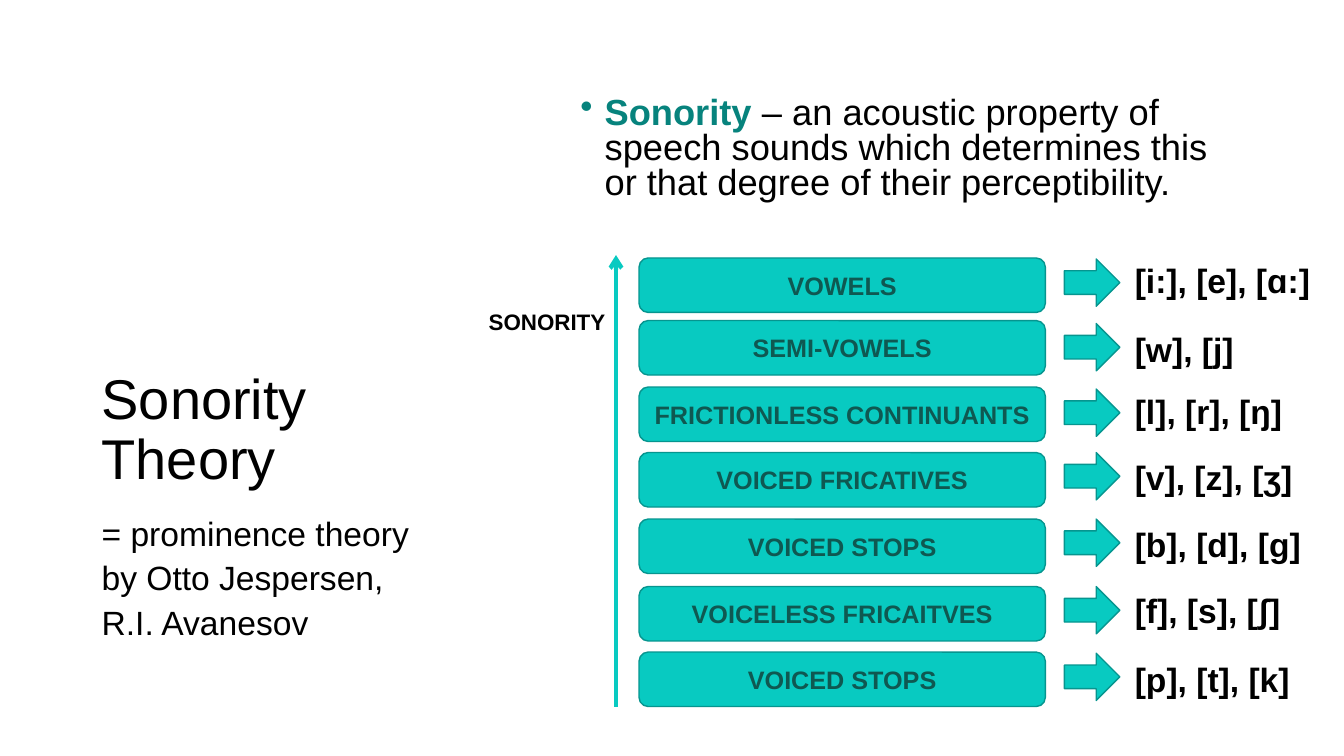
import pptx
import pptx.util
import pptx.dml.color
import pptx.enum.shapes
import pptx.enum.text
import pptx.oxml.ns
import lxml.etree

Pt = pptx.util.Pt
SHAPE = pptx.enum.shapes.MSO_SHAPE
ANCHOR = pptx.enum.text.MSO_ANCHOR
ALIGN = pptx.enum.text.PP_ALIGN

COLORS = {"text": "000000", "accent": "07837D", "fill": "08CAC1",
          "outline": "06958F", "label": "0F5851"}
TITLE = "Sonority Theory"
AUTHORS = ["= prominence theory", "by Otto Jespersen,", "R.I. Avanesov"]
DEFINITION = [
    ("Sonority ", "accent", True),
    ("– an acoustic property of speech sounds which determines this "
     "or that degree of their perceptibility.", "text", False),
]
AXIS_LABEL = "SONORITY"
CLASSES = [
    ("VOWELS", 184.3, 185, "[i:], [e], [ɑ:]", 182.2, 141.1),
    ("SEMI-VOWELS", 229, 231.1, "[w], [j]", 231.1, 85.7),
    ("FRICTIONLESS CONTINUANTS", 276.5, 277.9, "[l], [r], [ŋ]", 275.8, 121),
    ("VOICED FRICATIVES", 323.3, 323.3, "[v], [z], [ʒ]", 322.6, 131.8),
    ("VOICED STOPS", 370.8, 370.8, "[b], [d], [g]", 370.8, 133.9),
    ("VOICELESS FRICAITVES", 419, 419, "[f], [s], [ʃ]", 417.6, 119.5),
    ("VOICED STOPS", 465.8, 466.6, "[p], [t], [k]", 467.3, 126),
]


def rgb(name):
    return pptx.dml.color.RGBColor.from_string(COLORS[name])


def style(r, size, color="text", bold=False):
    r.font.name = "Arial"
    r.font.size = Pt(size)
    r.font.bold = bold
    r.font.color.rgb = rgb(color)


def add_text(s, box, lines, size, bold=False, wrap=True, spacing=None, before=0):
    sp = s.shapes.add_textbox(*map(Pt, box))
    tf = sp.text_frame
    tf.word_wrap = wrap
    if not wrap:
        tf.auto_size = pptx.enum.text.MSO_AUTO_SIZE.SHAPE_TO_FIT_TEXT
    tf.text = "\n".join(lines)
    for i, p in enumerate(tf.paragraphs):
        if spacing:
            p.line_spacing = spacing
        if i:
            p.space_before = Pt(before)
        for r in p.runs:
            style(r, size, bold=bold)
    return tf


def add_block(s, kind, box):
    sp = s.shapes.add_shape(kind, *map(Pt, box))
    sp.shadow.inherit = False
    sp.fill.solid()
    sp.fill.fore_color.rgb = rgb("fill")
    sp.line.color.rgb = rgb("outline")
    sp.line.width = Pt(1)
    return sp


def add_definition(s):
    sp = s.shapes.add_textbox(Pt(407.5), Pt(66.2), Pt(486), Pt(85))
    tf = sp.text_frame
    tf.word_wrap = True
    p = tf.paragraphs[0]
    p.line_spacing = 0.8
    pPr = p._p.get_or_add_pPr()
    pPr.set("marL", str(Pt(17.3)))
    pPr.set("indent", str(-Pt(17.3)))
    bullet = lxml.etree.SubElement(pPr, pptx.oxml.ns.qn("a:buChar"))
    bullet.set("char", "•")
    for text, color, bold in DEFINITION:
        r = p.add_run()
        r.text = text
        style(r, 25.9, color, bold)


def add_axis(s):
    axis = s.shapes.add_connector(pptx.enum.shapes.MSO_CONNECTOR.STRAIGHT,
                                  Pt(440), Pt(504.7), Pt(440), Pt(182.2))
    axis.line.color.rgb = rgb("fill")
    axis.line.width = Pt(3)
    ln = axis.line._get_or_add_ln()
    lxml.etree.SubElement(ln, pptx.oxml.ns.qn("a:tailEnd")).set("type", "arrow")
    lxml.etree.SubElement(axis._element.spPr, pptx.oxml.ns.qn("a:effectLst"))
    add_text(s, (342, 216.7, 98.6, 26.6), [AXIS_LABEL], 16, True, False)


def add_class(s, name, box_top, arrow_top, sounds, sounds_top, sounds_width):
    sp = add_block(s, SHAPE.ROUNDED_RECTANGLE, (456.5, box_top, 290.2, 38.9))
    tf = sp.text_frame
    tf.text = name
    tf.word_wrap = True
    tf.vertical_anchor = ANCHOR.MIDDLE
    p = tf.paragraphs[0]
    p.alignment = ALIGN.CENTER
    style(p.runs[0], 18, "label", True)
    add_block(s, SHAPE.RIGHT_ARROW, (760.3, arrow_top, 39.6, 33.8))
    add_text(s, (803.5, sounds_top, sounds_width, 36), [sounds], 24, True, False)


def main():
    prs = pptx.Presentation()
    prs.slide_width, prs.slide_height = Pt(960), Pt(540)
    s = prs.slides.add_slide(prs.slide_layouts[6])
    title = add_text(s, (65.5, 203.8, 257.8, 151.2), [TITLE], 40, spacing=0.9)
    title.vertical_anchor = ANCHOR.BOTTOM
    add_definition(s)
    add_text(s, (65.5, 365.8, 257.8, 108), AUTHORS, 24, spacing=0.9, before=6)
    add_axis(s)
    for row in CLASSES:
        add_class(s, *row)
    prs.save("out.pptx")


if __name__ == "__main__":
    main()
